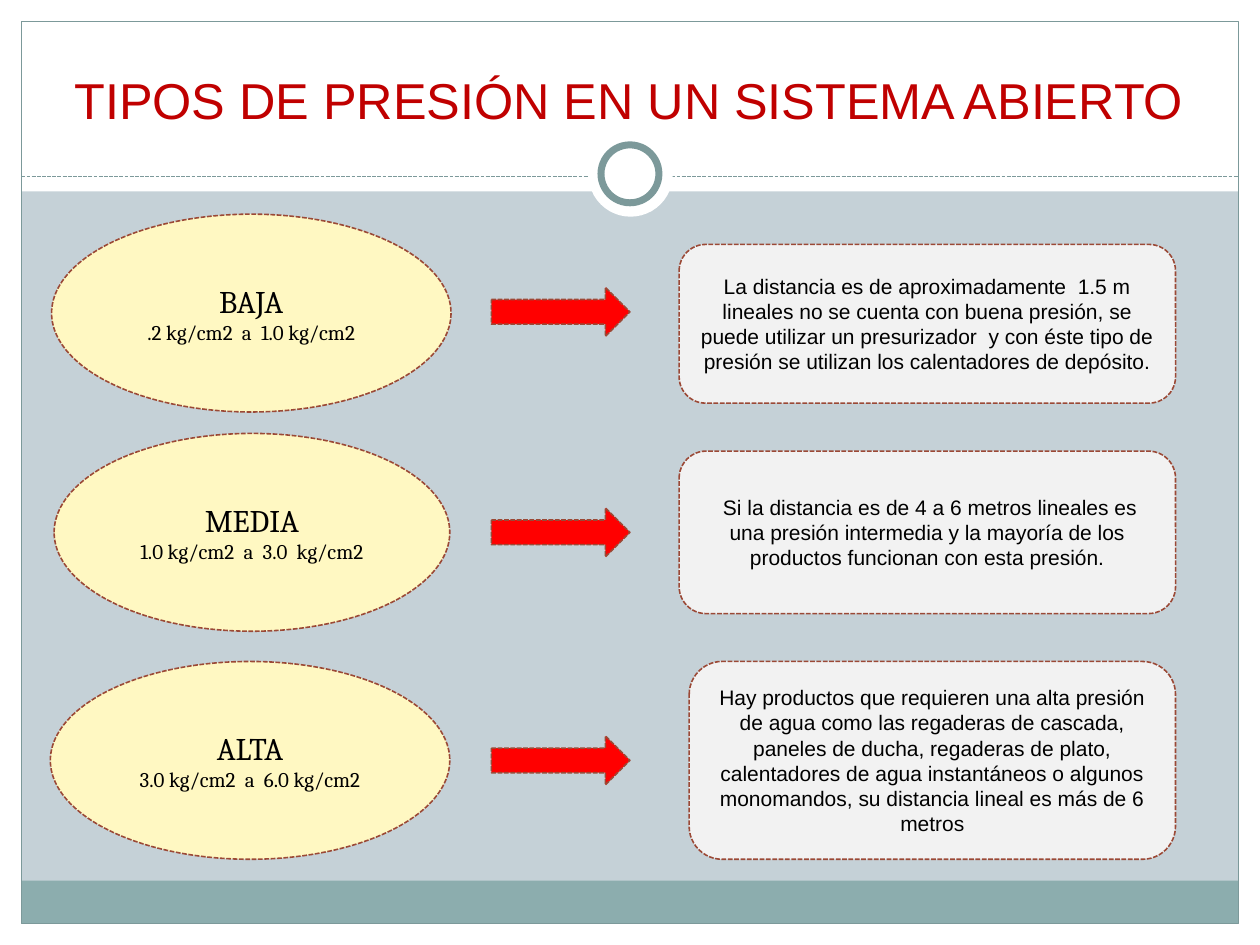
"""Build a slide on the three pressure levels of an open system."""
import lxml.etree
import pptx
import pptx.dml.color
import pptx.enum.dml
import pptx.enum.shapes
import pptx.enum.text
import pptx.oxml.ns
import pptx.util

RGB = pptx.dml.color.RGBColor
KIND = pptx.enum.shapes.MSO_SHAPE
ANCHOR = pptx.enum.text.MSO_ANCHOR
DASH = pptx.enum.dml.MSO_LINE.SQUARE_DOT

WHITE = RGB(0xFF, 0xFF, 0xFF)
BLACK = RGB(0x00, 0x00, 0x00)
MIST = RGB(0xC5, 0xD1, 0xD7)
TEAL = RGB(0x8C, 0xAD, 0xAE)
FRAME = RGB(0x7C, 0x99, 0x9A)
CRIMSON = RGB(0xC0, 0x00, 0x00)
RED = RGB(0xFF, 0x00, 0x00)
CREAM = RGB(0xFF, 0xF8, 0xC2)
PALE = RGB(0xF2, 0xF2, 0xF2)
RUST = RGB(0x9B, 0x49, 0x36)

COLS, ROWS = 100, 75
WIDE, HIGH = pptx.util.Inches(10), pptx.util.Inches(7.5)
EDGE = 1.7

LEVELS = [
    ("BAJA", ".2 kg/cm2  a  1.0 kg/cm2",
     "La distancia es de aproximadamente  1.5 m lineales no se cuenta con "
     "buena presión, se puede utilizar un presurizador  y con éste tipo de "
     "presión se utilizan los calentadores de depósito.",
     (4.1, 17, 31.7, 15.7), 22.8, (53.9, 19.4, 39.4, 12.6)),
    ("MEDIA", "1.0 kg/cm2  a  3.0  kg/cm2",
     " Si la distancia es de 4 a 6 metros lineales es una presión "
     "intermedia y la mayoría de los productos funcionan con esta presión.",
     (4.3, 34.4, 31.4, 15.7), 40.3, (53.9, 35.8, 39.4, 12.9)),
    ("ALTA", "3.0 kg/cm2  a  6.0 kg/cm2",
     "Hay productos que requieren una alta presión de agua como las "
     "regaderas de cascada, paneles de ducha, regaderas de plato, "
     "calentadores de agua instantáneos o algunos monomandos, su distancia "
     "lineal es más de 6 metros",
     (4, 52.5, 31.7, 15.7), 58.4, (54.7, 52.5, 38.6, 15.7)),
]


def grid(col, row):
    """Turn a grid column and row into slide lengths."""
    return round(WIDE * col / COLS), round(HIGH * row / ROWS)


def place(box):
    """Turn a grid box into left, top, width and height."""
    return *grid(*box[:2]), *grid(*box[2:])


def stroke(line, color, width, dash=None):
    """Format a line."""
    line.color.rgb = color
    line.width = pptx.util.Pt(width)
    if dash:
        line.dash_style = dash


def shape(slide, kind, box, fill=None, line=None, width=0.75, dash=None):
    """Add a flat preset shape on the grid."""
    item = slide.shapes.add_shape(kind, *place(box))
    item.shadow.inherit = False
    if fill is None:
        item.fill.background()
    else:
        item.fill.solid()
        item.fill.fore_color.rgb = fill
    if line is None:
        item.line.fill.background()
    else:
        stroke(item.line, line, width, dash)
    return item


def write(item, *lines, sizes=(12,), font="Arial", color=BLACK,
          anchor=ANCHOR.MIDDLE):
    """Write centred lines, one paragraph and one size each."""
    frame = item.text_frame
    frame.word_wrap = True
    frame.auto_size = pptx.enum.text.MSO_AUTO_SIZE.NONE
    frame.vertical_anchor = anchor
    for spot, (text, size) in enumerate(zip(lines, sizes)):
        para = frame.add_paragraph() if spot else frame.paragraphs[0]
        para.alignment = pptx.enum.text.PP_ALIGN.CENTER
        run = para.add_run()
        run.text = text
        run.font.size = pptx.util.Pt(size)
        run.font.name = font
        run.font.color.rgb = color


def rule(slide, row):
    """Add the dashed rule under the title."""
    line = slide.shapes.add_connector(
        pptx.enum.shapes.MSO_CONNECTOR.STRAIGHT,
        *grid(EDGE, row), *grid(COLS - EDGE, row))
    stroke(line.line, FRAME, 0.75, DASH)
    lxml.etree.SubElement(line.element.spPr,
                          pptx.oxml.ns.qn("a:effectLst"))


def decor(slide):
    """Draw the margins, frame, footer band, rule and ring."""
    for box in ((0, ROWS - EDGE, COLS, EDGE), (0, 0, COLS, 15.2),
                (0, 0, EDGE, ROWS), (COLS - EDGE, 0, EDGE, ROWS)):
        shape(slide, KIND.RECTANGLE, box, WHITE)
    inner = COLS - 2 * EDGE
    shape(slide, KIND.RECTANGLE, (EDGE, 69.9, inner, 3.4), TEAL)
    shape(slide, KIND.RECTANGLE, (EDGE, EDGE, inner, ROWS - 2 * EDGE),
          line=FRAME)
    rule(slide, 14)
    shape(slide, KIND.OVAL, (46.7, 10.5, 6.7, 6.7), WHITE)
    shape(slide, KIND.OVAL, (47.7, 11.5, 4.6, 4.6), WHITE, FRAME, 4)


def head(slide, text):
    """Place the title in front of the white band."""
    title = slide.shapes.title
    title.left, title.top, title.width, title.height = place(
        (3.3, 2.5, 93.3, 8.3))
    write(title, text, sizes=(28.8,), color=CRIMSON, anchor=ANCHOR.BOTTOM)
    title.element.getparent().append(title.element)


def level(slide, name, span, note, oval, row, card):
    """Draw one level: oval, arrow and explanation."""
    edge = {"line": RUST, "width": 0.9, "dash": DASH}
    item = shape(slide, KIND.OVAL, oval, CREAM, **edge)
    write(item, name, span, sizes=(18, 12), font="Cambria")
    shape(slide, KIND.RIGHT_ARROW, (39, row, 11, 3.9), RED, **edge)
    write(shape(slide, KIND.ROUNDED_RECTANGLE, card, PALE, **edge), note)


def main():
    """Build and save the slide."""
    deck = pptx.Presentation()
    deck.slide_width, deck.slide_height = WIDE, HIGH
    slide = deck.slides.add_slide(deck.slide_layouts[5])
    slide.background.fill.solid()
    slide.background.fill.fore_color.rgb = MIST
    decor(slide)
    head(slide, "TIPOS DE PRESIÓN EN UN SISTEMA ABIERTO")
    for data in LEVELS:
        level(slide, *data)
    deck.save("out.pptx")


if __name__ == "__main__":
    main()
